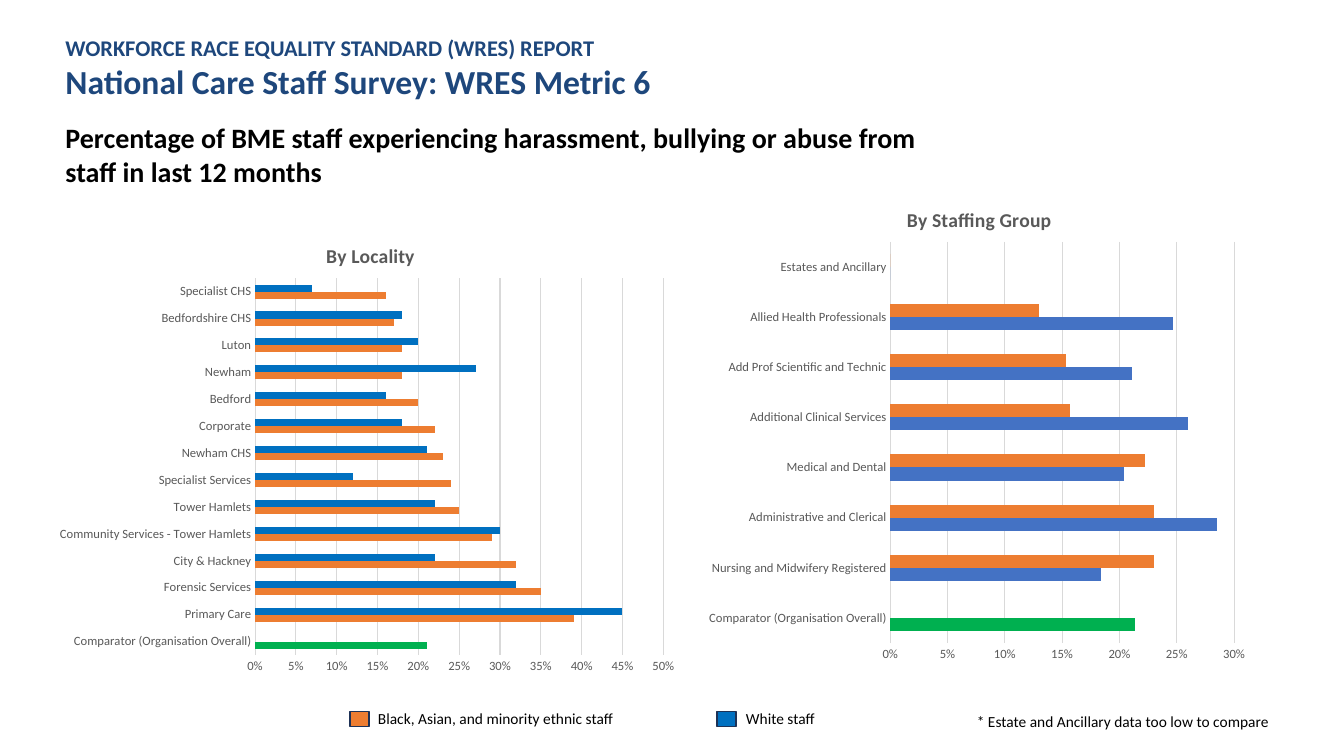
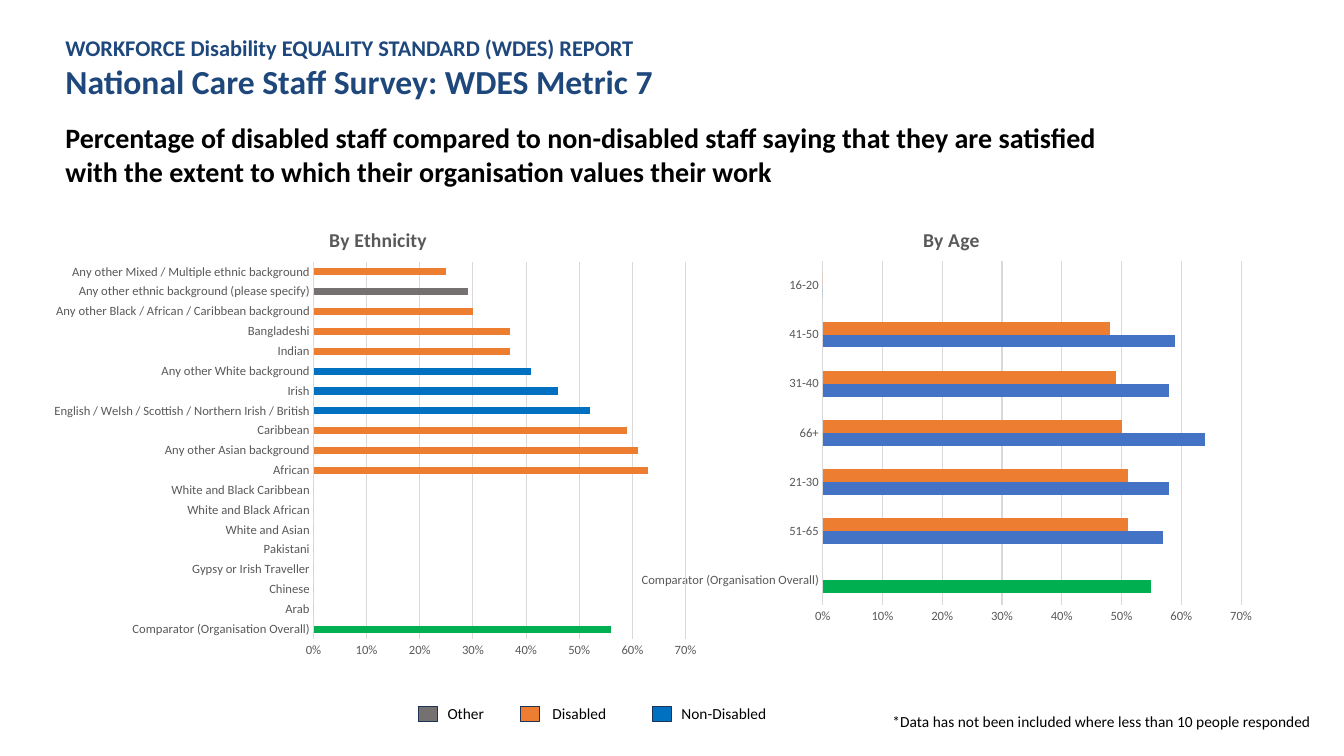
from lxml.etree import SubElement
from pptx import Presentation
from pptx.chart.data import CategoryChartData
from pptx.dml.color import RGBColor
from pptx.enum.chart import XL_CHART_TYPE, XL_TICK_MARK
from pptx.enum.shapes import MSO_SHAPE
from pptx.enum.text import MSO_AUTO_SIZE, PP_ALIGN
from pptx.oxml.ns import qn
from pptx.util import Inches, Pt

COLORS = {
    "heading": "1E477C",
    "text": "000000",
    "muted": "595959",
    "grid": "D9D9D9",
    "outline": "1E3256",
    "orange": "ED7D31",
    "blue": "0070C0",
    "indigo": "4472C4",
    "green": "00B050",
    "grey": "767171",
}
COMPARATOR = "Comparator (Organisation Overall)"


def rgb(name):
    return RGBColor.from_string(COLORS[name])


class SurveyDeck:
    """Holds the shared style and the slide being built."""

    font = "Calibri"

    def __init__(self):
        self.prs = Presentation()
        self.prs.slide_width, self.prs.slide_height = Inches(13.33), Inches(7.5)
        self.s = None

    def style(self, font, size, color, bold=False):
        values = {"name": self.font, "size": Pt(size), "bold": bold}
        for key, value in values.items():
            setattr(font, key, value)
        font.color.rgb = rgb(color)

    def text(self, x, y, w, h, lines, size=11, color="text", bold=False, align=PP_ALIGN.LEFT):
        tf = self.s.shapes.add_textbox(Inches(x), Inches(y), Inches(w), Inches(h)).text_frame
        tf.word_wrap = True
        tf.auto_size = MSO_AUTO_SIZE.SHAPE_TO_FIT_TEXT
        for i, (line, line_size) in enumerate((t, size) if isinstance(t, str) else t for t in lines):
            p = tf.paragraphs[0] if i == 0 else tf.add_paragraph()
            p.alignment = align
            r = p.add_run()
            r.text = line
            self.style(r.font, line_size, color, bold)

    def slide(self, report, title, question, question_width):
        self.s = self.prs.slides.add_slide(self.prs.slide_layouts[6])
        self.text(0.55, 0.29, 10.42, 0.77, [(report, 16), (title, 24)], color="heading", bold=True)
        self.text(0.55, 1.15, question_width, 0.77, [question], size=20, bold=True)

    def note(self, x, w, text, align=PP_ALIGN.LEFT):
        self.text(x, 7.02, w, 0.29, [text], align=align)

    def legend(self, y, entries):
        for x, label_x, w, label, color in entries:
            sp = self.s.shapes.add_shape(
                MSO_SHAPE.RECTANGLE, Inches(x), Inches(y + 0.07), Inches(0.19), Inches(0.15)
            )
            sp.shadow.inherit = False
            sp.fill.solid()
            sp.fill.fore_color.rgb = rgb(color)
            sp.line.color.rgb = rgb("outline")
            sp.line.width = Pt(1)
            self.text(label_x, y, w, 0.29, [label])

    def layout(self, parent, index, values):
        for old in parent.findall(qn("c:layout")):
            parent.remove(old)
        layout = SubElement(parent, qn("c:layout"))
        parent.insert(index, layout)
        manual = SubElement(layout, qn("c:manualLayout"))
        for tag, value in values.items():
            SubElement(manual, qn(f"c:{tag}")).set("val", str(value))

    def chart(self, box, plot, title, title_x, cats, series, top, step, points):
        x, y, w, h = box
        data = CategoryChartData(number_format="0%")
        data.categories = cats
        for i, (values, _) in enumerate(series, 1):
            data.add_series(f"Series {i}", values)
        chart = self.s.shapes.add_chart(
            XL_CHART_TYPE.BAR_CLUSTERED, *(Inches(v) for v in box), data
        ).chart
        self.style(chart.font, 10, "text")
        chart.has_legend = False
        chart.has_title = True
        p = chart.chart_title.text_frame.paragraphs[0]
        r = p.add_run()
        r.text = title
        self.style(r.font, 14, "muted", True)
        edge = {"xMode": "edge", "yMode": "edge"}
        px, py, pw, ph = plot
        root = chart._chartSpace
        self.layout(
            root.xpath(".//c:title")[0], 1,
            {**edge, "x": (title_x - x) / w, "y": 0.21 / h},
        )
        self.layout(
            root.xpath(".//c:plotArea")[0], 0,
            {"layoutTarget": "inner", **edge, "x": (px - x) / w, "y": (py - y) / h,
             "w": pw / w, "h": ph / h},
        )
        self.axes(chart, top, step)
        bars = chart.plots[0]
        bars.gap_width = 182
        bars.vary_by_categories = False
        for ser, (_, color) in zip(bars.series, series):
            ser.invert_if_negative = False
            self.fill(ser, color)
        for i, color in points.items():
            self.fill(bars.series[0].points[i], color)

    def fill(self, item, color):
        item.format.fill.solid()
        item.format.fill.fore_color.rgb = rgb(color)

    def axes(self, chart, top, step):
        for axis in (chart.category_axis, chart.value_axis):
            axis.major_tick_mark = axis.minor_tick_mark = XL_TICK_MARK.NONE
            self.style(axis.tick_labels.font, 9, "muted")
        cat, val = chart.category_axis, chart.value_axis
        for key, value in {"minimum_scale": 0, "maximum_scale": top, "major_unit": step}.items():
            setattr(val, key, value)
        val.tick_labels.number_format = "0%"
        val.tick_labels.number_format_is_linked = False
        val.format.line.fill.background()
        val.has_major_gridlines = True
        for line in (cat.format.line, val.major_gridlines.format.line):
            line.color.rgb = rgb("grid")
            line.width = Pt(0.75)


def race_slide(deck):
    deck.slide(
        "WORKFORCE RACE EQUALITY STANDARD (WRES) REPORT",
        "National Care Staff Survey: WRES Metric 6",
        "Percentage of BME staff experiencing harassment, bullying or abuse from staff in last 12 months",
        9.05,
    )
    deck.chart(
        (6.92, 1.8, 5.54, 4.87), (8.83, 2.4, 3.41, 3.98), "By Staffing Group", 8.96,
        [COMPARATOR, "Nursing and Midwifery Registered", "Administrative and Clerical",
         "Medical and Dental", "Additional Clinical Services", "Add Prof Scientific and Technic",
         "Allied Health Professionals", "Estates and Ancillary"],
        [([0.214, 0.184, 0.285, 0.204, 0.26, 0.211, 0.247, 0], "indigo"),
         ([None, 0.23, 0.23, 0.222, 0.157, 0.153, 0.13, 0], "orange")],
        0.3, 0.05, {0: "green"},
    )
    deck.chart(
        (0.47, 2.16, 6.35, 4.62), (2.53, 2.76, 4.05, 3.74), "By Locality", 3.2,
        [COMPARATOR, "Primary Care", "Forensic Services", "City & Hackney",
         "Community Services - Tower Hamlets", "Tower Hamlets", "Specialist Services",
         "Newham CHS", "Corporate", "Bedford", "Newham", "Luton", "Bedfordshire CHS",
         "Specialist CHS"],
        [([0.21, 0.39, 0.35, 0.32, 0.29, 0.25, 0.24, 0.23, 0.22, 0.2, 0.18, 0.18, 0.17, 0.16],
          "orange"),
         ([None, 0.45, 0.32, 0.22, 0.3, 0.22, 0.12, 0.21, 0.18, 0.16, 0.27, 0.2, 0.18, 0.07],
          "blue")],
        0.5, 0.05, {0: "green"},
    )
    deck.legend(6.99, [
        (3.47, 3.65, 2.88, "Black, Asian, and minority ethnic staff", "orange"),
        (7.11, 7.3, 2.88, "White staff", "blue"),
    ])
    deck.note(9.59, 3.33, "* Estate and Ancillary data too low to compare")


def disability_slide(deck):
    deck.slide(
        "WORKFORCE Disability EQUALITY STANDARD (WDES) REPORT",
        "National Care Staff Survey: WDES Metric 7",
        "Percentage of disabled staff compared to non-disabled staff saying that they are satisfied "
        "with the extent to which their organisation values their work",
        10.82,
    )
    deck.chart(
        (6.25, 2, 6.3, 4.28), (8.16, 2.59, 4.15, 3.41), "By Age", 9.12,
        [COMPARATOR, "51-65", "21-30", "66+", "31-40", "41-50", "16-20"],
        [([0.55, 0.57, 0.58, 0.64, 0.58, 0.59, 0], "indigo"),
         ([None, 0.51, 0.51, 0.5, 0.49, 0.48, 0], "orange")],
        0.7, 0.1, {0: "green"},
    )
    deck.chart(
        (0.41, 2, 6.64, 4.62), (3.11, 2.6, 3.69, 3.74), "By Ethnicity", 3.23,
        [COMPARATOR, "Arab", "Chinese", "Gypsy or Irish Traveller", "Pakistani",
         "White and Asian", "White and Black African", "White and Black Caribbean", "African",
         "Any other Asian background", "Caribbean",
         "English / Welsh / Scottish / Northern Irish / British", "Irish",
         "Any other White background", "Indian", "Bangladeshi",
         "Any other Black / African / Caribbean background",
         "Any other ethnic background (please specify)",
         "Any other Mixed / Multiple ethnic background"],
        [([0.56, 0, 0, 0, 0, 0, 0, 0, 0.63, 0.61, 0.59, 0.52, 0.46, 0.41, 0.37, 0.37, 0.3,
           0.29, 0.25], "orange")],
        0.7, 0.1, {0: "green", 11: "blue", 12: "blue", 13: "blue", 17: "grey"},
    )
    deck.legend(6.94, [
        (4.15, 4.34, 0.72, "Other", "grey"),
        (5.16, 5.38, 1.22, "Disabled", "orange"),
        (6.47, 6.66, 1.11, "Non-Disabled", "blue"),
    ])
    deck.note(8.75, 4.35, "*Data has not been included where less than 10 people responded",
              PP_ALIGN.RIGHT)


def main():
    deck = SurveyDeck()
    race_slide(deck)
    disability_slide(deck)
    deck.prs.save("out.pptx")


if __name__ == "__main__":
    main()
